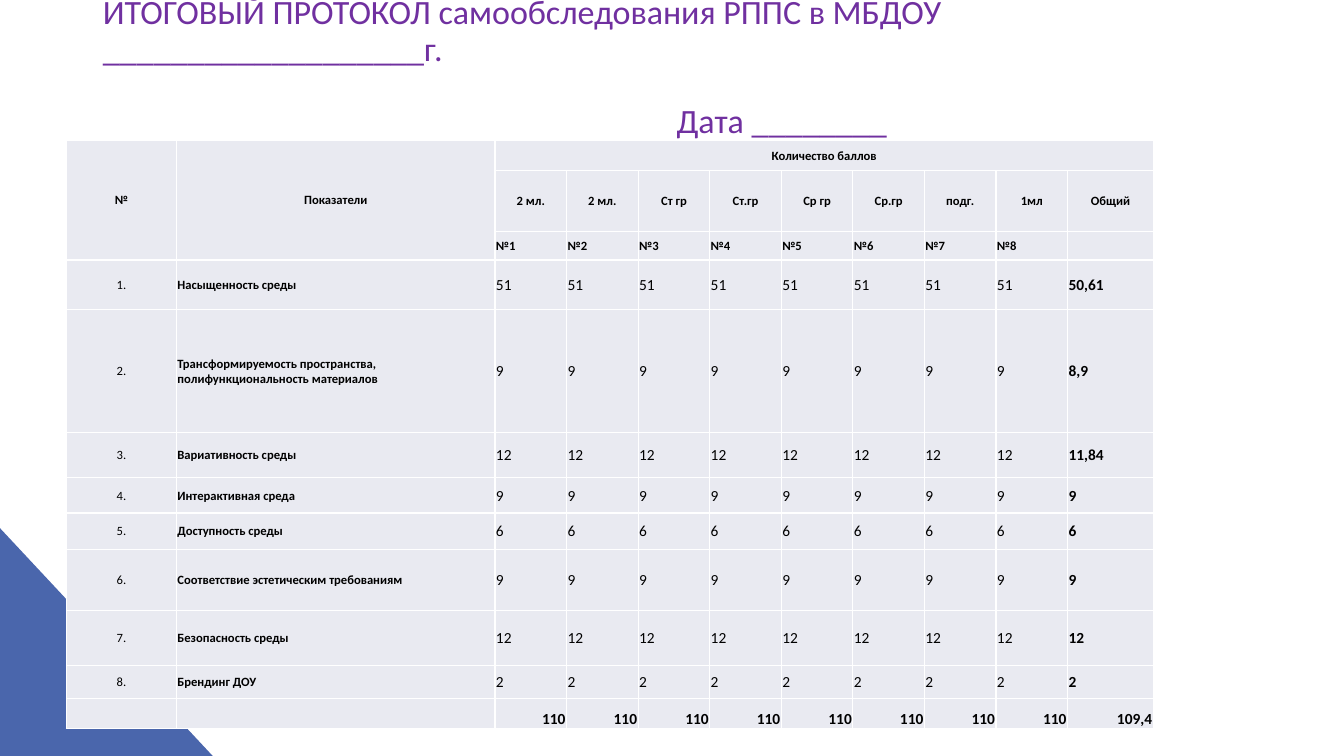
from lxml import etree
from pptx import Presentation
from pptx.dml.color import RGBColor
from pptx.enum.shapes import MSO_SHAPE
from pptx.enum.text import MSO_ANCHOR, MSO_AUTO_SIZE, PP_ALIGN
from pptx.oxml.ns import qn
from pptx.util import Inches, Pt

LEFT, MID, RIGHT, JUST = PP_ALIGN.LEFT, PP_ALIGN.CENTER, PP_ALIGN.RIGHT, PP_ALIGN.JUSTIFY
CENTER, BOTTOM = MSO_ANCHOR.MIDDLE, MSO_ANCHOR.BOTTOM
NO_FIT = MSO_AUTO_SIZE.NONE
CORNER = MSO_SHAPE.RIGHT_TRIANGLE

BLUE = RGBColor(0x4A, 0x66, 0xAC)
PURPLE = RGBColor(0x70, 0x30, 0xA0)
BLACK = RGBColor(0, 0, 0)
PALE = RGBColor(0xE9, 0xEA, 0xF1)
WHITE = RGBColor(0xFF, 0xFF, 0xFF)

COLS = [1.09, 3.16] + [0.71] * 8 + [0.85]
ROWS = [0.3, 0.61, 0.28, 0.49, 1.22, 0.45, 0.35, 0.36, 0.61, 0.54, 0.33, 0.3]
GROUPS = ["2 мл.", "2 мл.", "Ст гр", "Ст.гр", "Ср гр", "Ср.гр", "подг.", "1мл", "Общий"]
# Indicator, points of every group, overall points
SCORES = [
    ("Насыщенность среды", "51", "50,61"),
    ("Трансформируемость пространства, полифункциональность материалов", "9", "8,9"),
    ("Вариативность среды", "12", "11,84"),
    ("Интерактивная среда", "9", "9"),
    ("Доступность среды", "6", "6"),
    ("Соответствие эстетическим требованиям", "9", "9"),
    ("Безопасность среды", "12", "12"),
    ("Брендинг ДОУ", "2", "2"),
]


def write(para, text, size=9, bold=False, color=BLACK, align=LEFT, font="Calibri"):
    para.alignment = align
    if not text:
        # An empty cell still needs a small font to keep its row low
        etree.SubElement(para._p, qn("a:endParaRPr"), sz=str(size * 100))
        return
    run = para.add_run()
    run.text = text
    run.font.name, run.font.size, run.font.bold = font, Pt(size), bold
    run.font.color.rgb = color


class Deck:
    def __init__(self, width, height):
        self.file = Presentation()
        self.file.slide_width, self.file.slide_height = Inches(width), Inches(height)
        self.slide = self.file.slides.add_slide(self.file.slide_layouts[5])

    def shape(self, kind, box, fill):
        shape = self.slide.shapes.add_shape(kind, *map(Inches, box))
        shape.shadow.inherit = False
        shape.fill.solid()
        shape.fill.fore_color.rgb = fill
        shape.line.fill.background()
        self.slide.shapes._spTree.insert(2, shape._element)

    def title(self, box, lines, base, **style):
        title = self.slide.shapes.title
        title.left, title.top, title.width, title.height = map(Inches, box)
        frame = title.text_frame
        frame.word_wrap, frame.auto_size = True, NO_FIT
        frame.vertical_anchor, frame.margin_bottom = BOTTOM, Inches(base)
        for i, (text, indent, gap) in enumerate(lines):
            para = frame.add_paragraph() if i else frame.paragraphs[0]
            para.line_spacing, para.space_before = 0.9, Pt(gap)
            para._p.get_or_add_pPr().set("marL", str(Inches(indent)))
            write(para, text, **style)

    def table(self, box, cols, rows):
        frame = self.slide.shapes.add_table(len(rows), len(cols), *map(Inches, box))
        table = frame.table
        for col, width in zip(table.columns, cols):
            col.width = Inches(width)
        for row, height in zip(table.rows, rows):
            row.height = Inches(height)
        for cell in table.iter_cells():
            self.edge(cell)
            cell.fill.solid()
            cell.fill.fore_color.rgb = PALE
            cell.margin_left = cell.margin_right = cell.margin_top = Inches(0.01)
            cell.margin_bottom = 0
        return table

    def edge(self, cell):
        props = cell._tc.get_or_add_tcPr()
        for side in ("lnL", "lnR", "lnT", "lnB"):
            line = etree.SubElement(props, qn("a:" + side), w=str(Pt(1)))
            fill = etree.SubElement(line, qn("a:solidFill"))
            etree.SubElement(fill, qn("a:srgbClr"), val=str(WHITE))

    def cell(self, cell, text, anchor=CENTER, **style):
        cell.vertical_anchor = anchor
        write(cell.text_frame.paragraphs[0], text, **style)


def main():
    deck = Deck(13.33, 7.5)

    # Corner and title; the text rises above its box to clear the table
    deck.shape(CORNER, (0, 5.24, 2.11, 2.26), BLUE)
    lines = [
        ("ИТОГОВЫЙ ПРОТОКОЛ самообследования РППС в МБДОУ " + "_" * 19 + "г.", 0, 0),
        ("Дата " + "_" * 8, 5.69, 25.5),
    ]
    deck.title((0.92, 0.94, 11.5, 1.33), lines, 0.87, size=24.3, color=PURPLE)

    # Table head
    table = deck.table((0.66, 1.39, 10.78, 5.85), COLS, ROWS)
    last = len(COLS) - 1
    for col, text in enumerate(("№", "Показатели")):
        table.cell(0, col).merge(table.cell(2, col))
        deck.cell(table.cell(0, col), text, bold=True, align=MID)
    table.cell(0, 2).merge(table.cell(0, last))
    deck.cell(table.cell(0, 2), "Количество баллов", bold=True, align=MID)
    for i, group in enumerate(GROUPS):
        number = f"№{i + 1}" if i + 2 < last else ""
        deck.cell(table.cell(1, i + 2), group, bold=True, align=MID)
        deck.cell(table.cell(2, i + 2), number, bold=True, align=JUST)

    # Scores
    for i, (name, score, mean) in enumerate(SCORES):
        row = i + 3
        deck.cell(table.cell(row, 0), f"{i + 1}.", align=MID)
        deck.cell(table.cell(row, 1), name, bold=True)
        for col in range(2, last):
            deck.cell(table.cell(row, col), score, size=11, align=JUST)
        deck.cell(table.cell(row, last), mean, size=11, bold=True, align=JUST)

    # Totals
    for col, total in enumerate(["", ""] + ["110"] * 8 + ["109,4"]):
        deck.cell(table.cell(len(ROWS) - 1, col), total, BOTTOM, size=11, bold=True, align=RIGHT)

    deck.file.save("out.pptx")


if __name__ == "__main__":
    main()
